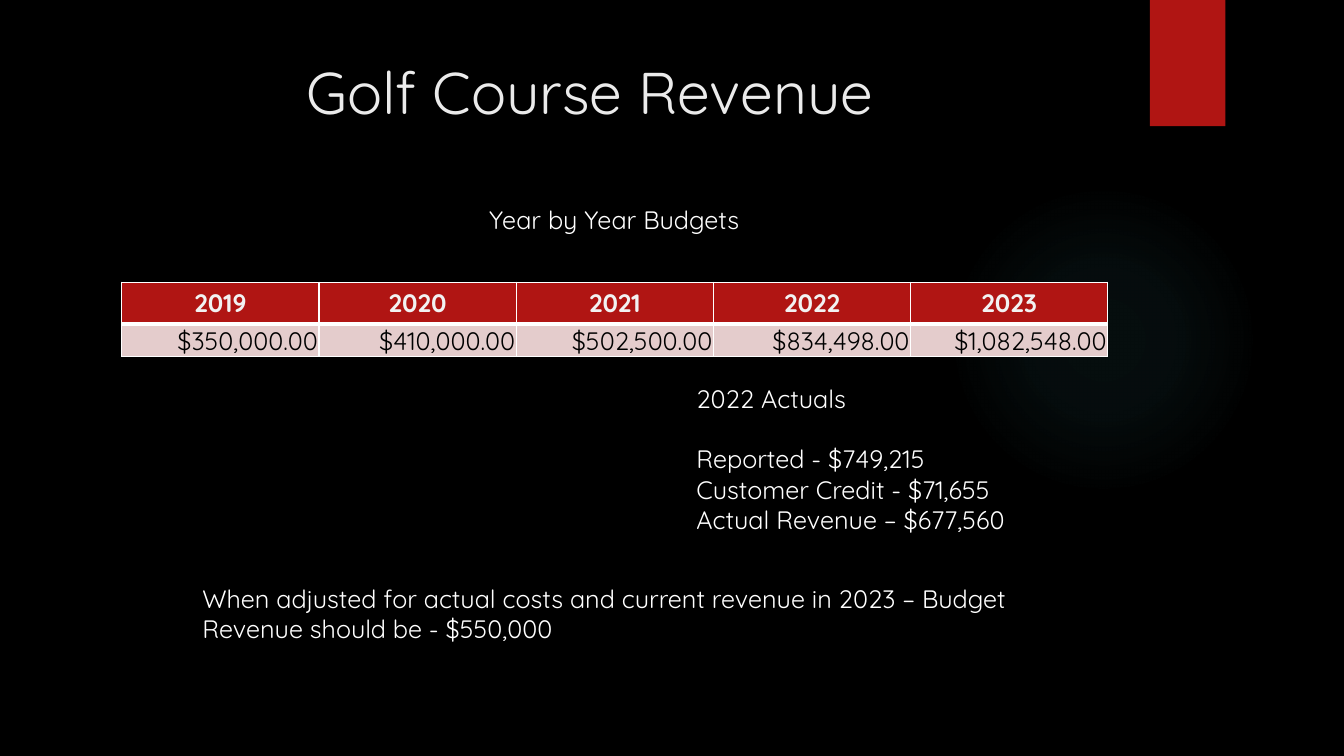
from lxml import etree
from pptx import Presentation
from pptx.dml.color import RGBColor
from pptx.enum.shapes import MSO_SHAPE
from pptx.enum.text import MSO_ANCHOR, PP_ALIGN
from pptx.oxml import parse_xml
from pptx.oxml.ns import qn
from pptx.util import Cm, Pt

LEFT, CENTER, RIGHT = PP_ALIGN.LEFT, PP_ALIGN.CENTER, PP_ALIGN.RIGHT
TOP, BOTTOM = MSO_ANCHOR.TOP, MSO_ANCHOR.BOTTOM
RECTANGLE, OVAL = MSO_SHAPE.RECTANGLE, MSO_SHAPE.OVAL

BLACK = RGBColor(0x00, 0x00, 0x00)
WHITE = RGBColor(0xFF, 0xFF, 0xFF)
OFF_WHITE = RGBColor(0xEB, 0xEB, 0xEB)
HEADER_TEXT = RGBColor(0xF2, 0xF2, 0xF2)
RED = RGBColor(0xB0, 0x15, 0x13)
PALE_RED = RGBColor(0xE4, 0xCC, 0xCC)
TEAL = RGBColor(0x50, 0xB9, 0xC1)

DRAWING = "http://schemas.openxmlformats.org/drawingml/2006/main"
GLOW_STOPS = [(0, 7), (36, 6), (69, 0)]
BODY_FONT = {"name": "Quicksand", "size": Pt(18), "bold": False}

BUDGETS = {
    "2019": "$350,000.00",
    "2020": "$410,000.00",
    "2021": "$502,500.00",
    "2022": "$834,498.00",
    "2023": "$1,082,548.00",
}
ACTUALS = [
    "2022 Actuals",
    "Reported - $749,215",
    "Customer Credit - $71,655",
    "Actual Revenue – $677,560",
]
CONCLUSION = (
    "When adjusted for actual costs and current revenue in 2023 – "
    "Budget Revenue should be - $550,000"
)


def apply_format(target, values):
    """Set each named attribute on the target."""
    for name, value in values.items():
        setattr(target, name, value)


def format_paragraph(paragraph, text, color, alignment=LEFT, **font_values):
    """Write one paragraph in the body font with any overrides."""
    paragraph.text = text
    paragraph.alignment = alignment
    apply_format(paragraph.font, {**BODY_FONT, **font_values})
    paragraph.font.color.rgb = color


def add_plain_shape(slide, preset, color, *box):
    """Add a filled shape without outline or shadow."""
    shape = slide.shapes.add_shape(preset, *map(Cm, box))
    shape.shadow.inherit = False
    shape.fill.solid()
    shape.fill.fore_color.rgb = color
    shape.line.fill.background()
    return shape


def add_glow(slide, *box):
    """Add a circle that fades out from its centre."""
    glow = add_plain_shape(slide, OVAL, TEAL, *box)
    stops = "".join(
        f'<a:gs pos="{position * 1000}"><a:srgbClr val="{TEAL}">'
        f'<a:alpha val="{opacity * 1000}"/></a:srgbClr></a:gs>'
        for position, opacity in GLOW_STOPS
    )
    gradient = parse_xml(
        f'<a:gradFill xmlns:a="{DRAWING}" rotWithShape="1"><a:gsLst>{stops}</a:gsLst>'
        '<a:path path="circle">'
        '<a:fillToRect l="50000" t="50000" r="50000" b="50000"/>'
        "</a:path></a:gradFill>"
    )
    properties = glow.element.spPr
    properties.replace(properties.find(qn("a:solidFill")), gradient)


def add_title(slide, text, *box):
    """Place and format the title placeholder."""
    title = slide.shapes.title
    apply_format(title, dict(zip(("left", "top", "width", "height"), map(Cm, box))))
    apply_format(title.text_frame, {"word_wrap": True, "vertical_anchor": TOP})
    format_paragraph(
        title.text_frame.paragraphs[0], text, OFF_WHITE, CENTER, size=Pt(42)
    )


def add_text(slide, lines, *box, alignment=LEFT):
    """Add a wrapping text box with one paragraph per line."""
    frame = slide.shapes.add_textbox(*map(Cm, box)).text_frame
    frame.word_wrap = True
    for index, line in enumerate(lines):
        paragraph = frame.add_paragraph() if index else frame.paragraphs[0]
        format_paragraph(paragraph, line, WHITE, alignment)
    return frame


def set_borders(cell, **widths):
    """Draw white cell borders of the given widths in points."""
    properties = cell._tc.get_or_add_tcPr()
    for side, width in widths.items():
        line = etree.SubElement(properties, qn(f"a:ln{side}"), w=str(Pt(width)))
        fill = etree.SubElement(line, qn("a:solidFill"))
        etree.SubElement(fill, qn("a:srgbClr"), val=str(WHITE))


def fill_cell(cell, color):
    """Give a cell a solid fill."""
    cell.fill.solid()
    cell.fill.fore_color.rgb = color


def add_budget_table(slide, *box):
    """Add the table with a row of years above a row of budgets."""
    table = slide.shapes.add_table(2, len(BUDGETS), *map(Cm, box)).table
    table.rows[0].height, table.rows[1].height = Cm(0.97), Cm(0.77)
    value_cell = {
        "vertical_anchor": BOTTOM,
        "margin_left": Cm(0.03),
        "margin_top": Cm(0.03),
        "margin_right": Cm(0.03),
        "margin_bottom": 0,
    }
    for column, (year, budget) in enumerate(BUDGETS.items()):
        header, value = table.cell(0, column), table.cell(1, column)
        set_borders(header, L=1, R=1, T=1, B=3)
        set_borders(value, L=1, R=1, T=3, B=1)
        fill_cell(header, RED)
        fill_cell(value, PALE_RED)
        apply_format(value, value_cell)
        format_paragraph(
            header.text_frame.paragraphs[0], year, HEADER_TEXT, CENTER, bold=True
        )
        format_paragraph(value.text_frame.paragraphs[0], budget, BLACK, RIGHT)


def main():
    """Build and save the golf course revenue slide."""
    presentation = Presentation()
    presentation.slide_width, presentation.slide_height = Cm(33.87), Cm(19.05)
    slide = presentation.slides.add_slide(presentation.slide_layouts[5])
    slide.background.fill.solid()
    slide.background.fill.fore_color.rgb = BLACK

    add_glow(slide, 23.9, 4.65, 7.82, 7.82)
    add_plain_shape(slide, RECTANGLE, RED, 28.98, 0, 1.9, 3.18)
    add_title(slide, "Golf Course Revenue", 1.8, 1.27, 26.14, 3.89)
    add_budget_table(slide, 3.07, 7.11, 24.85, 1.74)
    add_text(
        slide, ["Year by Year Budgets"], 7.34, 5.03, 16.28, 1.02, alignment=CENTER
    )
    actuals = add_text(slide, ACTUALS, 17.3, 9.53, 9.86, 4.11)
    actuals.paragraphs[0].space_after = Pt(21.6)
    add_text(slide, [CONCLUSION], 4.85, 14.58, 23.27, 1.8)

    presentation.save("out.pptx")


if __name__ == "__main__":
    main()
